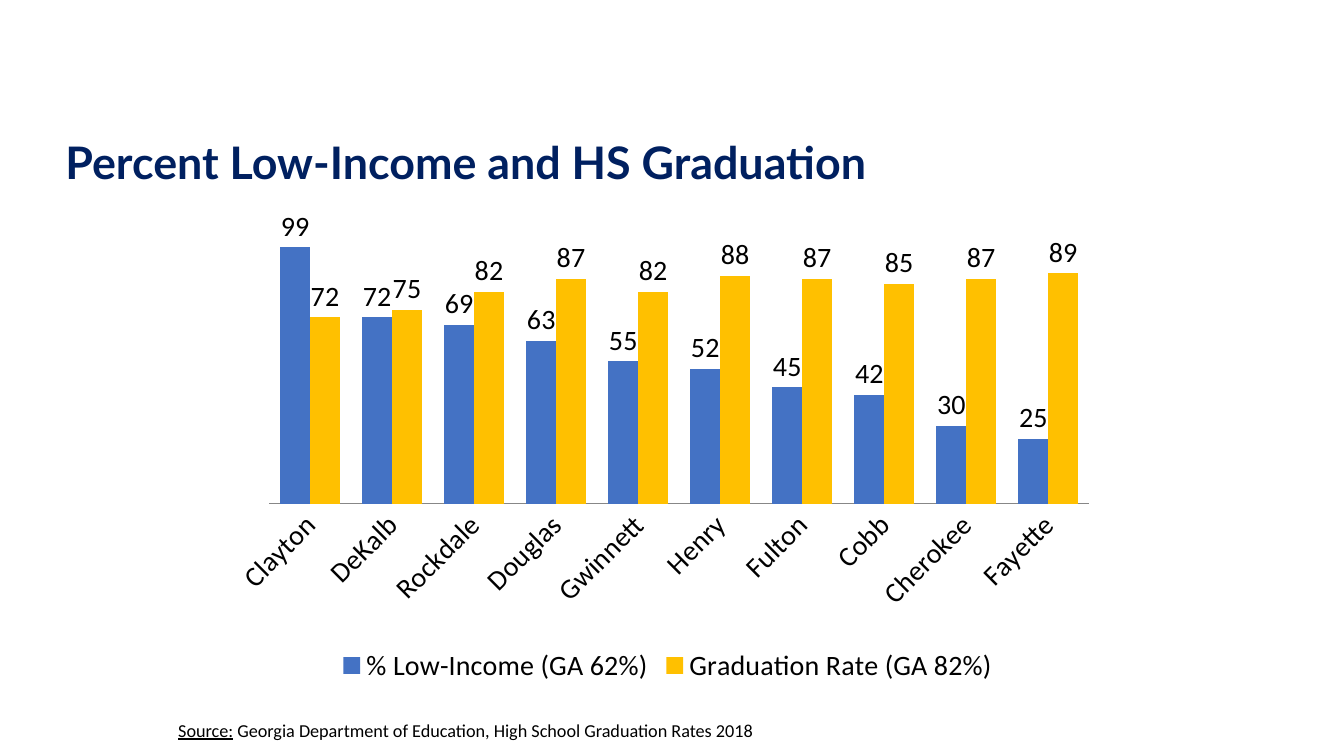
import pptx
import pptx.chart.data
import pptx.dml.color
import pptx.enum.chart
import pptx.enum.text
import pptx.oxml
import pptx.util
from pptx.util import Pt

NAVY = pptx.dml.color.RGBColor(0x00, 0x20, 0x60)
BLACK = pptx.dml.color.RGBColor(0x00, 0x00, 0x00)
GRAY = pptx.dml.color.RGBColor(0x87, 0x87, 0x87)
BLUE = pptx.dml.color.RGBColor(0x44, 0x72, 0xC4)
GOLD = pptx.dml.color.RGBColor(0xFF, 0xC0, 0x00)

COUNTIES = ["Clayton", "DeKalb", "Rockdale", "Douglas", "Gwinnett",
            "Henry", "Fulton", "Cobb", "Cherokee", "Fayette"]
RATES = [
    ("% Low-Income (GA 62%)", [99, 72, 69, 63, 55, 52, 45, 42, 30, 25], BLUE),
    ("Graduation Rate (GA 82%)", [72, 75, 82, 87, 82, 88, 87, 85, 87, 89], GOLD),
]


def style_font(font, name, size, color, bold=False):
    font.name = name
    font.size = Pt(size)
    font.color.rgb = color
    font.bold = bold


presentation = pptx.Presentation()
presentation.slide_width = Pt(960)
presentation.slide_height = Pt(540)
slide = presentation.slides.add_slide(presentation.slide_layouts[6])

# Title
title = slide.shapes.add_textbox(Pt(39.6), Pt(65.5), Pt(881.3), Pt(104.4))
title.text_frame.word_wrap = True
title.text_frame.vertical_anchor = pptx.enum.text.MSO_ANCHOR.MIDDLE
title.text_frame.text = "Percent Low-Income and HS Graduation"
paragraph = title.text_frame.paragraphs[0]
paragraph.line_spacing = 0.9
style_font(paragraph.runs[0].font, "Lato", 32, NAVY, bold=True)

# Source line
source = slide.shapes.add_textbox(Pt(120.2), Pt(515.5), Pt(630), Pt(18))
source.text_frame.word_wrap = True
paragraph = source.text_frame.paragraphs[0]
paragraph.line_spacing = 0.6
for text, underlined in [
    ("Source:", True),
    (" Georgia Department of Education, High School Graduation Rates 2018", False),
]:
    run = paragraph.add_run()
    run.text = text
    style_font(run.font, "Calibri", 13, BLACK)
    run.font.underline = underlined

# Chart
chart_data = pptx.chart.data.CategoryChartData(number_format="0")
chart_data.categories = COUNTIES
for name, values, color in RATES:
    chart_data.add_series(name, values)
chart = slide.shapes.add_chart(
    pptx.enum.chart.XL_CHART_TYPE.COLUMN_CLUSTERED,
    Pt(162), Pt(131.8), Pt(630), Pt(360), chart_data,
).chart
style_font(chart.font, "Calibri", 20, BLACK)
chart.has_title = False
chart.has_legend = True
chart.legend.position = pptx.enum.chart.XL_LEGEND_POSITION.BOTTOM
chart.legend.include_in_layout = False

plot = chart.plots[0]
plot.vary_by_categories = False
plot.gap_width = 75
plot.overlap = 0
for series, (name, values, color) in zip(plot.series, RATES):
    series.format.fill.solid()
    series.format.fill.fore_color.rgb = color
    labels = series.data_labels
    labels.show_value = True
    labels.number_format = "0"
    labels.number_format_is_linked = False
    labels.position = pptx.enum.chart.XL_LABEL_POSITION.OUTSIDE_END

category_axis = chart.category_axis
category_axis.major_tick_mark = pptx.enum.chart.XL_TICK_MARK.NONE
category_axis.format.line.color.rgb = GRAY
category_axis.format.line.width = Pt(0.75)
style_font(category_axis.tick_labels.font, "Calibri", 20, BLACK)
category_axis._element.txPr.bodyPr.set("rot", "-2700000")

value_axis = chart.value_axis
value_axis.visible = False
value_axis.has_major_gridlines = False
value_axis.minimum_scale = 0
value_axis.maximum_scale = 120

# Fixed inner plot area, as fractions of the chart
plot_area = chart._chartSpace.chart.plotArea
for layout in plot_area.findall(pptx.oxml.ns.qn("c:layout")):
    plot_area.remove(layout)
plot_area.insert(0, pptx.oxml.parse_xml(
    '<c:layout xmlns:c="http://schemas.openxmlformats.org/drawingml/2006/chart">'
    '<c:manualLayout><c:layoutTarget val="inner"/>'
    '<c:xMode val="edge"/><c:yMode val="edge"/>'
    '<c:x val="0.048"/><c:y val="0.017"/><c:w val="0.93"/><c:h val="0.617"/>'
    '</c:manualLayout></c:layout>'
))

presentation.save("out.pptx")
